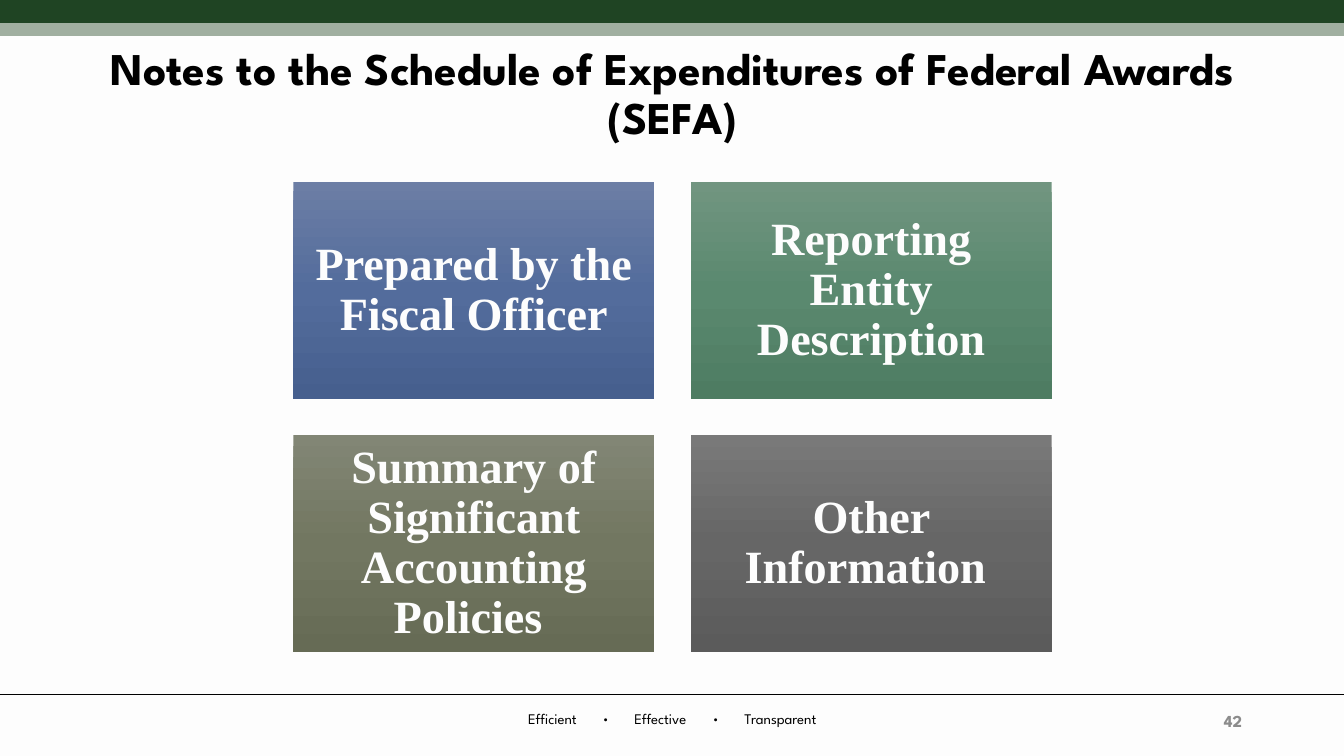
"""Build the slide on notes to the schedule of federal awards."""
import copy
import pptx
import pptx.dml.color
import pptx.enum.shapes
import pptx.enum.text
import pptx.util
import lxml.etree

Inches, Pt = pptx.util.Inches, pptx.util.Pt
ALIGN, ANCHOR = pptx.enum.text.PP_ALIGN, pptx.enum.text.MSO_ANCHOR
DRAW = "{http://schemas.openxmlformats.org/drawingml/2006/main}"

TITLE = "Notes to the Schedule of Expenditures of Federal Awards (SEFA)"
CARDS = [
    ("Prepared by the Fiscal Officer", ("6C7EA5", "536C9C", "465F8E")),
    ("Reporting Entity Description", ("719580", "5A896F", "4E7C62")),
    ("Summary of Significant Accounting Policies ", ("828675", "727761", "666B55")),
    ("Other Information ", ("797979", "666666", "5B5B5B")),
]
MOTTO = [("Efficient", 5.48), ("•", 6.01), ("Effective", 6.55),
         ("•", 7.1), ("Transparent", 7.74)]
NUMBER = "42"
RULES = [(0.1, "1F4423", 18), (0.29, "A0AFA0", 9), (6.89, "000000", 0.5)]

WIDE, HIGH = 13.33, 7.5
LEFT, TOP, CARD_W, CARD_H, GAP = 2.91, 1.81, 3.58, 2.15, 0.36
THEME = {
    "back": "FDFDFD",
    "title": {"name": "League Spartan", "size": Pt(32.4), "bold": True, "color": "000000"},
    "card": {"name": "Times New Roman", "size": Pt(33), "bold": True, "color": "FDFDFD"},
    "motto": {"name": "League Spartan", "size": Pt(10.5), "bold": False, "color": "000000"},
    "number": {"name": "League Spartan", "size": Pt(12), "bold": True, "color": "8C8C8C"},
}


def rgb(code):
    """Turn a hex code into a colour."""
    return pptx.dml.color.RGBColor.from_string(code)


def assign(item, values):
    """Set attributes of an item from a dict."""
    for key, value in values.items():
        setattr(item, key, value)


def write(shape, text, style, align, anchor=ANCHOR.MIDDLE, space=1.0, inset=(0.1, 0.05)):
    """Put styled text in a shape and return its paragraph."""
    side, edge = map(Inches, inset)
    frame = shape.text_frame
    assign(frame, {"word_wrap": True, "auto_size": pptx.enum.text.MSO_AUTO_SIZE.NONE,
                   "vertical_anchor": anchor, "margin_left": side,
                   "margin_right": side, "margin_top": edge, "margin_bottom": edge})
    para = frame.paragraphs[0]
    assign(para, {"alignment": align, "line_spacing": space})
    run = para.add_run()
    run.text = text
    look = dict(THEME[style])
    run.font.color.rgb = rgb(look.pop("color"))
    assign(run.font, look)
    return para


def shade(shape, codes):
    """Fill a shape with an even gradient from top to bottom."""
    shape.fill.gradient()
    shape.fill.gradient_angle = 270
    stops = shape.fill._fill._gradFill.find(DRAW + "gsLst")
    stops.insert(1, copy.deepcopy(stops[0]))
    for i, (stop, code) in enumerate(zip(shape.fill.gradient_stops, codes)):
        stop.color.rgb = rgb(code)
        stop.position = i / (len(codes) - 1)


def rule(slide, y, code, width):
    """Draw a line across the slide."""
    line = slide.shapes.add_connector(
        pptx.enum.shapes.MSO_CONNECTOR.STRAIGHT, 0, Inches(y), Inches(WIDE), Inches(y))
    line.line.color.rgb = rgb(code)
    line.line.width = Pt(width)
    lxml.etree.SubElement(line._element.spPr, DRAW + "effectLst")


def card(slide, i, text, codes):
    """Add one card of the two-column grid."""
    row, col = divmod(i, 2)
    box = slide.shapes.add_shape(
        pptx.enum.shapes.MSO_SHAPE.RECTANGLE,
        Inches(LEFT + col * (CARD_W + GAP)), Inches(TOP + row * (CARD_H + GAP)),
        Inches(CARD_W), Inches(CARD_H))
    box.shadow.inherit = False
    box.line.fill.background()
    shade(box, codes)
    write(box, text, "card", ALIGN.CENTER, space=0.9, inset=(0.14, 0.14))


def footer(slide):
    """Add the motto on centred tab stops, and the slide number."""
    box = slide.shapes.add_textbox(0, Inches(6.99), Inches(WIDE), Inches(0.28))
    text = "".join("\t" + word for word, x in MOTTO)
    para = write(box, text, "motto", ALIGN.LEFT, ANCHOR.TOP, inset=(0, 0.05))
    tabs = lxml.etree.SubElement(para._p.get_or_add_pPr(), DRAW + "tabLst")
    for word, x in MOTTO:
        lxml.etree.SubElement(tabs, DRAW + "tab", pos=str(Inches(x)), algn="ctr")
    box = slide.shapes.add_textbox(Inches(9.42), Inches(6.95), Inches(3), Inches(0.4))
    write(box, NUMBER, "number", ALIGN.RIGHT)


def main():
    """Build and save the slide."""
    deck = pptx.Presentation()
    assign(deck, {"slide_width": Inches(WIDE), "slide_height": Inches(HIGH)})
    slide = deck.slides.add_slide(deck.slide_layouts[5])
    slide.background.fill.solid()
    slide.background.fill.fore_color.rgb = rgb(THEME["back"])
    for y, code, width in RULES:
        rule(slide, y, code, width)
    title = slide.shapes.title
    assign(title, {"left": Inches(0.92), "top": Inches(0.4),
                   "width": Inches(11.5), "height": Inches(1.1)})
    write(title, TITLE, "title", ALIGN.CENTER, space=0.9)
    for i, (text, codes) in enumerate(CARDS):
        card(slide, i, text, codes)
    footer(slide)
    deck.save("out.pptx")


if __name__ == "__main__":
    main()
